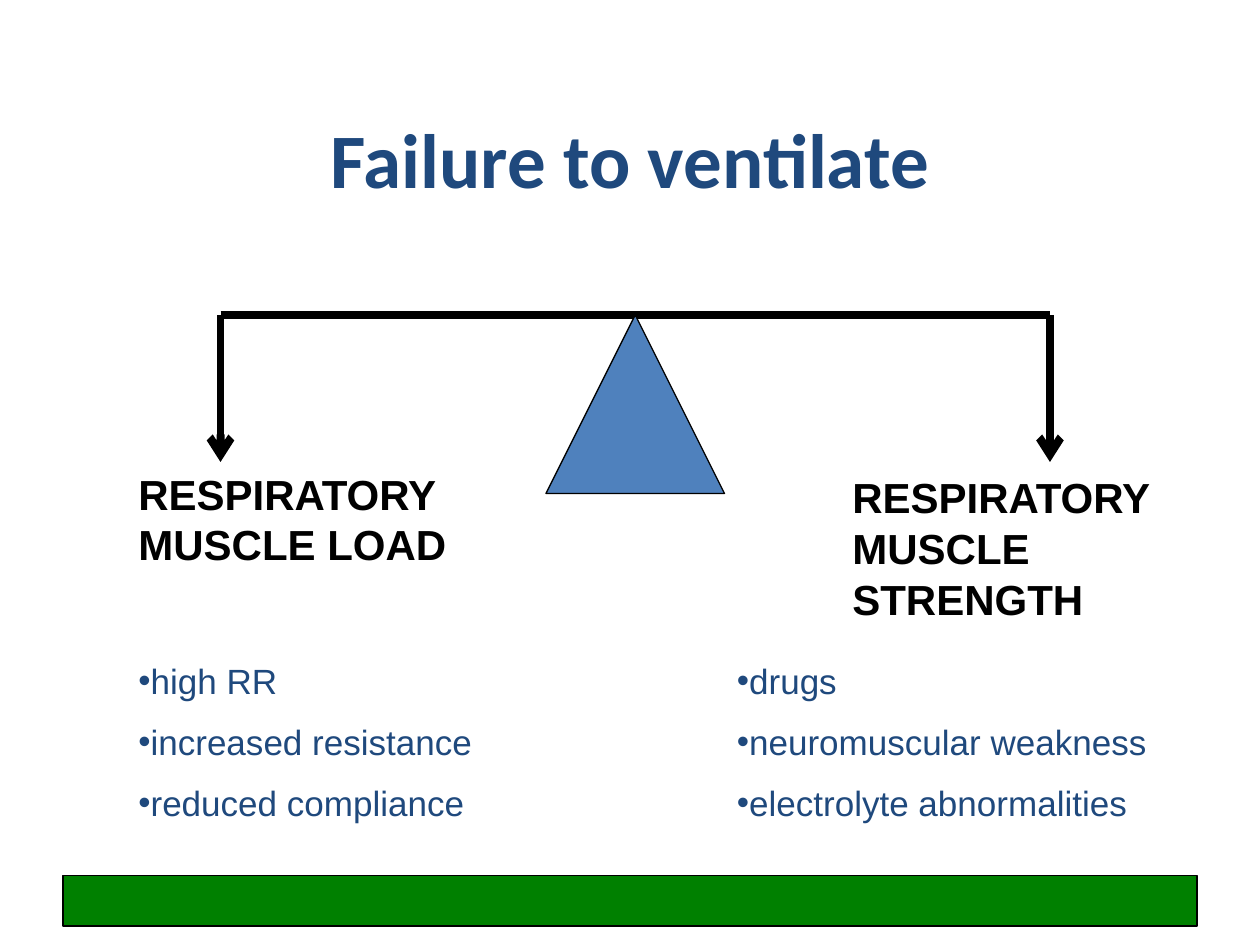
import pptx
import pptx.dml.color
import pptx.enum.shapes
import pptx.enum.text
import pptx.util
from lxml import etree
from pptx.oxml.ns import qn

BLACK = pptx.dml.color.RGBColor(0x00, 0x00, 0x00)
NAVY = pptx.dml.color.RGBColor(0x1F, 0x49, 0x7D)
BLUE = pptx.dml.color.RGBColor(0x4F, 0x81, 0xBD)
GREEN = pptx.dml.color.RGBColor(0x00, 0x80, 0x00)
WIDTH = pptx.util.Inches(10)
HEIGHT = pptx.util.Inches(7.5)
COLUMN = WIDTH // 120
ROW = HEIGHT // 90


def grid(*cells):
    """Turn alternating column and row counts into lengths."""
    return [round(cell * (ROW if index % 2 else COLUMN)) for index, cell in enumerate(cells)]


def add_solid(slide, preset, box, color):
    """Draw a filled preset shape with a thin black outline."""
    solid = slide.shapes.add_shape(preset, *grid(*box))
    solid.shadow.inherit = False
    solid.fill.solid()
    solid.fill.fore_color.rgb = color
    solid.line.color.rgb = BLACK
    solid.line.width = pptx.util.Pt(0.75)


def add_beam(slide, start, end, arrow=False):
    """Draw one thick bar of the balance, with an optional arrowhead."""
    beam = slide.shapes.add_connector(
        pptx.enum.shapes.MSO_CONNECTOR.STRAIGHT, *grid(*start, *end))
    beam.line.color.rgb = BLACK
    beam.line.width = pptx.util.Pt(4.5)
    if arrow:
        etree.SubElement(beam.line._get_or_add_ln(), qn("a:tailEnd"), type="arrow")
    etree.SubElement(beam._element.spPr, qn("a:effectLst"))


def add_words(slide, box, lines, size, color, font="Arial", bold=False,
              gap=0, spacing=None, bullet=False, centered=False):
    """Fill a box with paragraphs that share one style."""
    frame = slide.shapes.add_textbox(*grid(*box)).text_frame
    frame.word_wrap = True
    if centered:
        frame.vertical_anchor = pptx.enum.text.MSO_ANCHOR.MIDDLE
    for index, line in enumerate(lines):
        paragraph = frame.add_paragraph() if index else frame.paragraphs[0]
        paragraph.text = line
        if centered:
            paragraph.alignment = pptx.enum.text.PP_ALIGN.CENTER
        if spacing:
            paragraph.line_spacing = spacing
        if index:
            paragraph.space_before = pptx.util.Pt(gap)
        if bullet:
            properties = paragraph._p.get_or_add_pPr()
            etree.SubElement(properties, qn("a:buFont"), typeface="Arial")
            etree.SubElement(properties, qn("a:buChar"), char="•")
        paragraph.font.name = font
        paragraph.font.size = pptx.util.Pt(size)
        paragraph.font.bold = bold
        paragraph.font.color.rgb = color


def add_balance(slide, box):
    """Draw a level beam with two hanging arrows on a triangular pivot."""
    left, top, width, drop = box
    right = left + width
    pivot = 17
    add_beam(slide, (left, top), (right, top))
    for end in (left, right):
        add_beam(slide, (end, top), (end, top + drop), arrow=True)
    add_solid(slide, pptx.enum.shapes.MSO_SHAPE.ISOSCELES_TRIANGLE,
              (left + (width - pivot) / 2, top, pivot, pivot), BLUE)


def add_side(slide, heading_box, heading, causes_box, causes, spacing=None):
    """Write the heading and the causes on one side of the balance."""
    add_words(slide, heading_box, heading, 24, BLACK, bold=True, gap=12, spacing=spacing)
    add_words(slide, causes_box, causes, 20, NAVY, gap=11, bullet=True)


def main():
    """Build the slide and save it."""
    deck = pptx.Presentation()
    deck.slide_width, deck.slide_height = WIDTH, HEIGHT
    slide = deck.slides.add_slide(deck.slide_layouts[6])
    add_solid(slide, pptx.enum.shapes.MSO_SHAPE.RECTANGLE, (6, 83.4, 108, 4.8), GREEN)
    add_words(slide, (9, 10, 102, 10), ["Failure to ventilate"], 44, NAVY,
              font="Calibri", bold=True, centered=True)
    add_balance(slide, (21, 30, 79, 14))
    add_side(slide, (12, 44, 36, 10.8), ["RESPIRATORY MUSCLE LOAD"],
             (12, 62.2, 37, 17.2),
             ["high RR", "increased resistance", "reduced compliance"])
    add_side(slide, (80, 46, 33, 14.6), ["RESPIRATORY", "MUSCLE", "STRENGTH"],
             (69, 62.2, 46, 17.2),
             ["drugs", "neuromuscular weakness", "electrolyte abnormalities"],
             spacing=0.6)
    deck.save("out.pptx")


if __name__ == "__main__":
    main()
